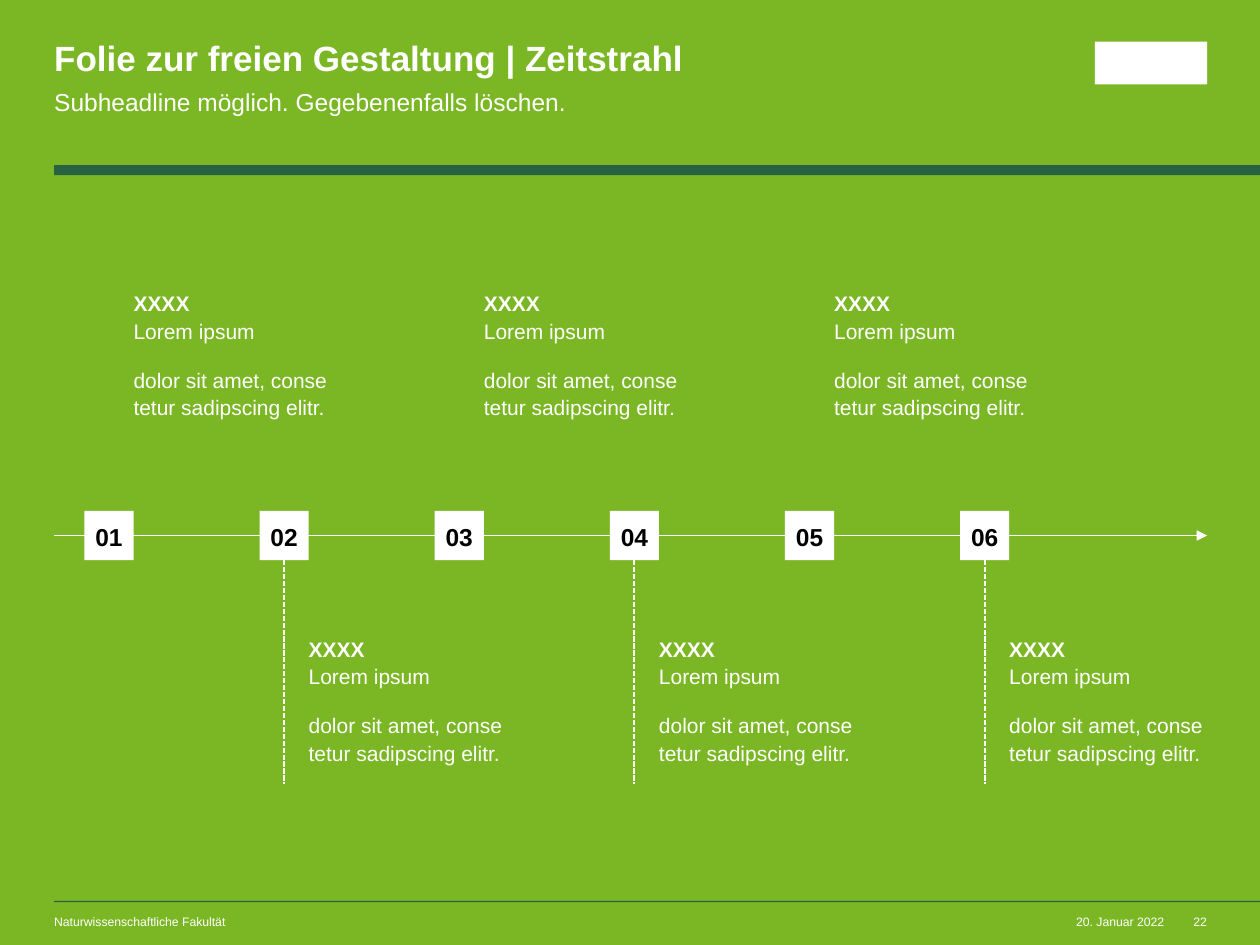
from dataclasses import dataclass

from lxml.etree import SubElement
from pptx import Presentation
from pptx.dml.color import RGBColor
from pptx.enum.dml import MSO_LINE
from pptx.enum.shapes import MSO_CONNECTOR, MSO_SHAPE
from pptx.enum.text import MSO_ANCHOR, PP_ALIGN
from pptx.oxml.ns import qn
from pptx.util import Inches, Pt


@dataclass(frozen=True)
class Theme:
    green: RGBColor = RGBColor(0x7B, 0xB7, 0x25)
    dark_green: RGBColor = RGBColor(0x26, 0x61, 0x41)
    white: RGBColor = RGBColor(0xFF, 0xFF, 0xFF)
    black: RGBColor = RGBColor(0x00, 0x00, 0x00)
    font: str = "Arial"
    title: int = 20
    subtitle: int = 14
    marker: int = 14
    body: int = 12
    footer: int = 7


THEME = Theme()
MARKERS = ["01", "02", "03", "04", "05", "06"]
ENTRY = [
    ["XXXX", "Lorem ipsum"],
    ["dolor sit amet, conse", "tetur sadipscing elitr."],
]


def write_text(shape, paragraphs, *, size, color=THEME.white, bold=False,
               lead_bold=False, align=PP_ALIGN.LEFT, anchor=MSO_ANCHOR.TOP,
               spacing=1.0, after=0, wrap=True):
    frame = shape.text_frame
    frame.word_wrap = wrap
    frame.vertical_anchor = anchor
    frame.margin_left = frame.margin_right = 0
    frame.margin_top = frame.margin_bottom = 0
    for row, lines in enumerate(paragraphs):
        paragraph = frame.add_paragraph() if row else frame.paragraphs[0]
        paragraph.alignment = align
        paragraph.line_spacing = spacing
        paragraph.space_after = Pt(after)
        for column, line in enumerate(lines):
            if column:
                paragraph.add_line_break()
            run = paragraph.add_run()
            run.text = line
            run.font.name = THEME.font
            run.font.size = Pt(size)
            run.font.color.rgb = color
            run.font.bold = bold or (lead_bold and row == column == 0)


def add_text(slide, box, paragraphs, **text_format):
    write_text(slide.shapes.add_textbox(*map(Inches, box)), paragraphs, **text_format)


def add_bar(slide, box, color):
    bar = slide.shapes.add_shape(MSO_SHAPE.RECTANGLE, *map(Inches, box))
    bar.shadow.inherit = False
    bar.fill.solid()
    bar.fill.fore_color.rgb = color
    bar.line.fill.background()
    return bar


def add_line(slide, start, end):
    line = slide.shapes.add_connector(
        MSO_CONNECTOR.STRAIGHT, *map(Inches, (*start, *end)))
    line.line.color.rgb = THEME.white
    line.line.width = Pt(1)
    SubElement(line._element.spPr, qn("a:effectLst"))
    return line


def add_header(slide, box):
    left, top, width, height = box
    add_text(slide, (left, top, 5.61, 0.3),
             [["Folie zur freien Gestaltung | Zeitstrahl"]],
             size=THEME.title, bold=True, spacing=0.9)
    add_text(slide, (left, top + 0.34, 5.61, 0.24),
             [["Subheadline möglich. Gegebenenfalls löschen."]],
             size=THEME.subtitle, spacing=1.1, after=8)
    add_bar(slide, (left + width - 0.89, top, 0.89, 0.34), THEME.white)
    add_bar(slide, (left, top + height - 0.08, 10 - left, 0.08), THEME.dark_green)


def add_footer(slide, box):
    left, top, width, height = box
    right = left + width
    text_top = top + height - 0.12
    add_bar(slide, (left, top, 10 - left, 0.01), THEME.dark_green)
    add_text(slide, (left, text_top, 4.49, 0.12),
             [["Naturwissenschaftliche Fakultät"]], size=THEME.footer)
    for text, text_right, text_width in (
            ("20. Januar 2022", right - 0.34, 0.71), ("22", right, 0.2)):
        add_text(slide, (text_right - text_width, text_top, text_width, 0.12),
                 [[text]], size=THEME.footer, align=PP_ALIGN.RIGHT, wrap=False)


def add_timeline(slide, box):
    left, top, width, height = box
    side, pitch = 0.39, 1.39
    axis_y = top + 1.96
    marker_top = axis_y - side / 2

    axis = add_line(slide, (left, axis_y), (left + width, axis_y))
    SubElement(axis.line._get_or_add_ln(), qn("a:tailEnd"), type="triangle")

    for index, number in enumerate(MARKERS):
        marker_left = left + 0.24 + index * pitch
        marker = add_bar(slide, (marker_left, marker_top, side, side), THEME.white)
        write_text(marker, [[number]], size=THEME.marker, color=THEME.black,
                   bold=True, align=PP_ALIGN.CENTER, anchor=MSO_ANCHOR.MIDDLE,
                   spacing=1.1, after=12)
        below = index % 2 == 1
        entry_top = top + 2.74 if below else top
        add_text(slide, (marker_left + side, entry_top, 1.55, 1.04), ENTRY,
                 size=THEME.body, lead_bold=True, spacing=1.1, after=12, wrap=False)
        if below:
            center = marker_left + side / 2
            stem = add_line(slide, (center, marker_top + side), (center, top + height))
            stem.line.dash_style = MSO_LINE.SQUARE_DOT
            stem.begin_connect(marker, 2)


def main():
    deck = Presentation()
    deck.slide_width, deck.slide_height = Inches(10), Inches(7.5)
    slide = deck.slides.add_slide(deck.slide_layouts[6])
    slide.background.fill.solid()
    slide.background.fill.fore_color.rgb = THEME.green
    add_header(slide, (0.43, 0.33, 9.15, 1.06))
    add_timeline(slide, (0.43, 2.29, 9.15, 3.93))
    add_footer(slide, (0.43, 7.15, 9.15, 0.23))
    deck.save("out.pptx")


if __name__ == "__main__":
    main()
